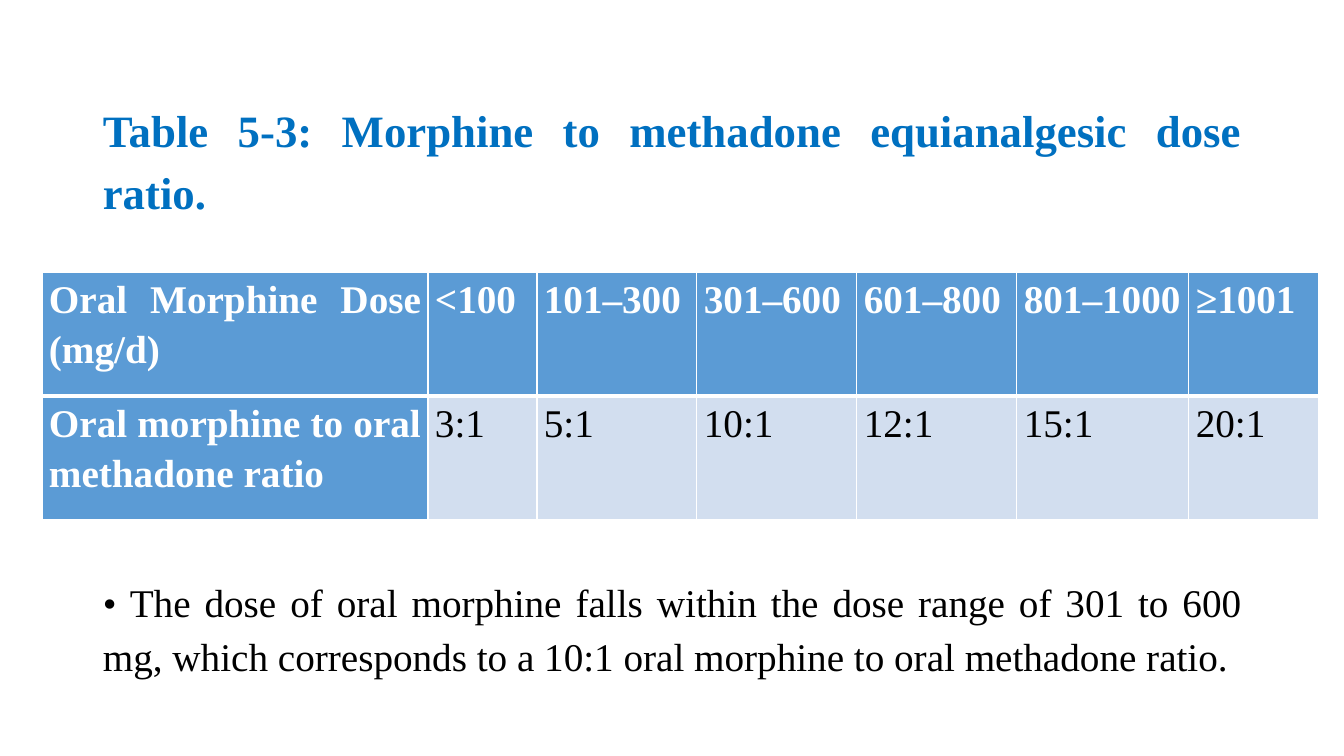
from lxml import etree
from pptx import Presentation, util as u
from pptx.dml.color import RGBColor
from pptx.enum import text
from pptx.oxml import ns

PX = 914400 / 100.8

WHITE = RGBColor(0xFF, 0xFF, 0xFF)
BLACK = RGBColor(0, 0, 0)
TITLE = RGBColor(0x00, 0x70, 0xC0)
HEAD = RGBColor(0x5B, 0x9B, 0xD5)
BODY = RGBColor(0xD2, 0xDE, 0xEF)

COLS = [386, 109, 160, 160, 160, 172, 130]
ROW = 124
DOSES = [
    ["Oral Morphine Dose (mg/d)", "<100", "101–300", "301–600",
     "601–800", "801–1000", "≥1001"],
    ["Oral morphine to oral methadone ratio", "3:1", "5:1", "10:1",
     "12:1", "15:1", "20:1"],
]


def px(n):
    return u.Emu(round(n * PX))


def assign(obj, values):
    for name, value in values.items():
        setattr(obj, name, value)


def write(frame, words, size, color, bold):
    """Fill a text frame with one justified paragraph."""
    para = frame.paragraphs[0]
    assign(para, {"alignment": text.PP_ALIGN.JUSTIFY, "line_spacing": 1.15})
    run = para.add_run()
    run.text = words
    assign(run.font, {"name": "Times New Roman", "size": u.Pt(size),
                      "bold": bold})
    run.font.color.rgb = color


def add_text(slide, box, words, size, color, bold, anchor):
    frame = slide.shapes.add_textbox(*map(px, box)).text_frame
    assign(frame, {"word_wrap": True, "vertical_anchor": anchor})
    write(frame, words, size, color, bold)


def add_edges(cell, widths):
    """Draw white cell borders; widths maps each side to points."""
    props = cell._tc.get_or_add_tcPr()
    for i, (side, width) in enumerate(widths.items()):
        line = etree.Element(ns.qn(f"a:ln{side}"), w=str(u.Pt(width)))
        fill = etree.SubElement(line, ns.qn("a:solidFill"))
        etree.SubElement(fill, ns.qn("a:srgbClr"), val=str(WHITE))
        props.insert(i, line)


def add_cell(cell, words, top, first):
    label = top or first
    assign(cell, {"margin_left": px(7), "margin_right": px(7),
                  "margin_top": 0, "margin_bottom": 0})
    cell.fill.solid()
    cell.fill.fore_color.rgb = HEAD if label else BODY
    write(cell.text_frame, words, 28, WHITE if label else BLACK, label)
    add_edges(cell, {"L": 1, "R": 1, "T": 1 if top else 3,
                     "B": 3 if top else 1})


def add_grid(slide, left, top):
    size = (sum(COLS), ROW * len(DOSES))
    grid = slide.shapes.add_table(len(DOSES), len(COLS), px(left), px(top),
                                  *map(px, size)).table
    for col, width in zip(grid.columns, COLS):
        col.width = px(width)
    for r, line in enumerate(DOSES):
        grid.rows[r].height = px(ROW)
        for c, words in enumerate(line):
            add_cell(grid.cell(r, c), words, r == 0, c == 0)


def main():
    deck = Presentation()
    assign(deck, {"slide_width": px(1344), "slide_height": px(756)})
    slide = deck.slides.add_slide(deck.slide_layouts[6])

    # Title
    add_text(slide, (93, 87, 1159, 139),
             "Table 5-3: Morphine to methadone equianalgesic dose ratio.",
             32, TITLE, True, text.MSO_ANCHOR.MIDDLE)

    # Dose table
    add_grid(slide, 42, 272)

    # Worked reading of the table
    add_text(slide, (93, 566, 1159, 169),
             "• The dose of oral morphine falls within the dose range of "
             "301 to 600 mg, which corresponds to a 10:1 oral morphine to "
             "oral methadone ratio.",
             28, BLACK, False, text.MSO_ANCHOR.TOP)

    deck.save("out.pptx")


if __name__ == "__main__":
    main()
